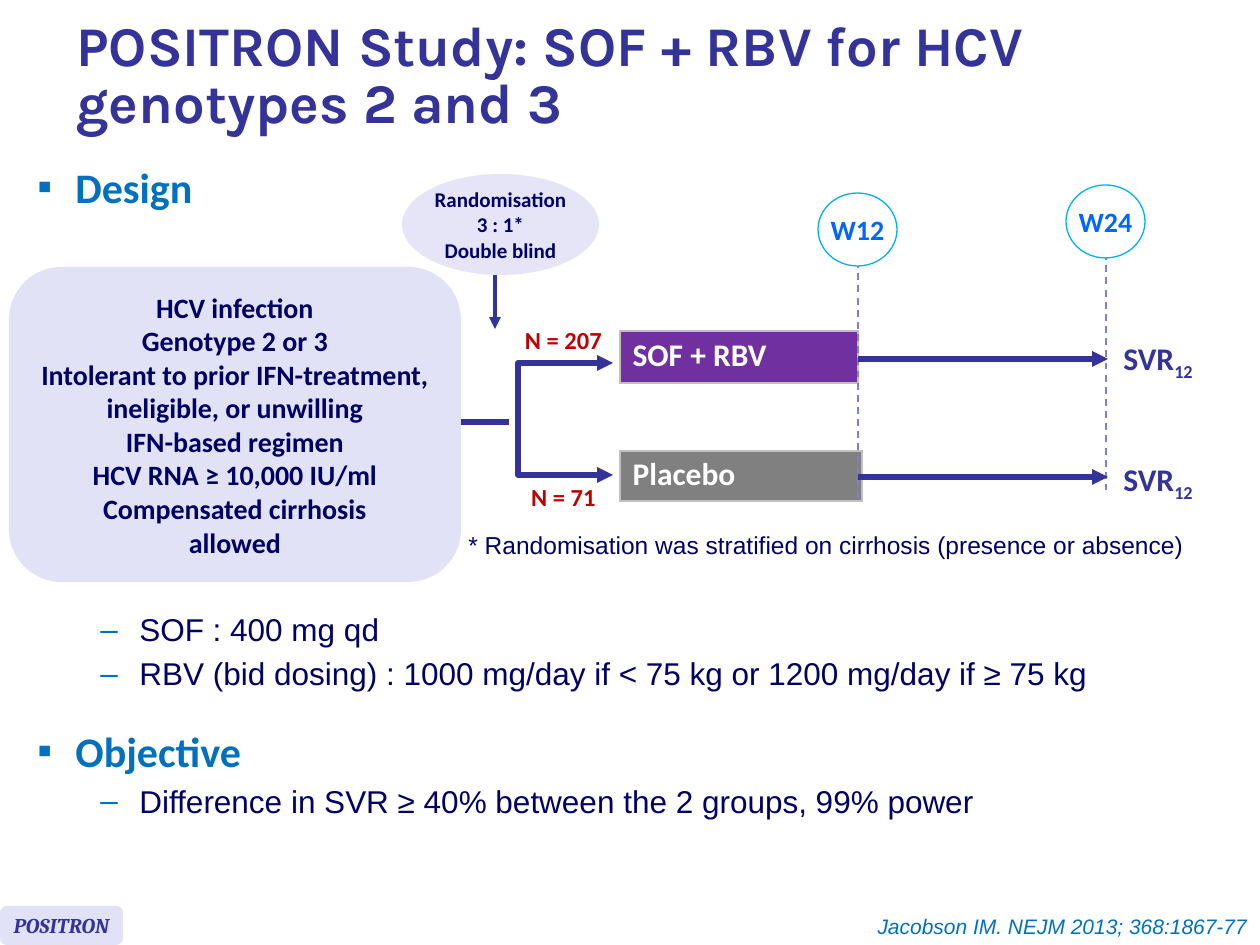
from dataclasses import dataclass

from lxml import etree
from pptx import Presentation
from pptx import util as u
from pptx.dml.color import RGBColor
from pptx.enum import dml, shapes, text
from pptx.oxml import ns

PX_PER_INCH = 126


def px(n):
    return u.Emu(round(n * 914400 / PX_PER_INCH))


def rgb(code):
    return RGBColor.from_string(code)


def sub(parent, tag, **attrs):
    return etree.SubElement(parent, ns.qn(tag), attrs)


@dataclass(frozen=True)
class Theme:
    navy: str = "000066"
    indigo: str = "333399"
    blue: str = "0070C0"
    week: str = "0066FF"
    ring: str = "00B0F0"
    dash: str = "7E7ED4"
    red: str = "C00000"
    pale: str = "E2E2F6"
    paler: str = "E5E5F7"
    purple: str = "7030A0"
    grey: str = "808080"
    border: str = "C0C0C0"
    white: str = "FFFFFF"
    title: int = 32
    heading: int = 24
    body: int = 18
    box: int = 16
    note: int = 14
    small: int = 12


T = Theme()


def write(tf, line, size=T.body, font="Calibri", color=T.navy, bold=True,
          italic=False, align=None, spacing=None, bullet=None, level=0, subscript=None):
    """Write one paragraph, using the empty first one if there is one."""
    first = not tf.paragraphs[0].runs
    p = tf.paragraphs[0] if first else tf.add_paragraph()
    p.level = level
    if align is not None:
        p.alignment = align
    if spacing:
        p.line_spacing = spacing
    if bullet:
        if not first:
            p.space_before = u.Pt(size * 0.2)
        left, hang = (102, 39) if level else (38, 38)
        pPr = p._p.get_or_add_pPr()
        pPr.set("marL", str(px(left)))
        pPr.set("indent", str(-px(hang)))
        sub(sub(pPr, "a:buClr"), "a:srgbClr", val=T.blue)
        sub(pPr, "a:buFont", typeface="Arial")
        sub(pPr, "a:buChar", char=bullet)
    for part in filter(None, (line, subscript)):
        r = p.add_run()
        r.text = part
        r.font.name, r.font.size = font, u.Pt(size)
        r.font.bold, r.font.italic = bold, italic
        r.font.color.rgb = rgb(color)
        if part is subscript:
            r._r.get_or_add_rPr().set("baseline", "-25000")


class Deck:
    def __init__(self):
        self.prs = Presentation()
        self.prs.slide_width, self.prs.slide_height = u.Inches(10), u.Inches(7.5)
        self.s = self.prs.slides.add_slide(self.prs.slide_layouts[6])

    def text(self, x, y, w, h, *lines, wrap=True, middle=False, **style):
        tf = self.s.shapes.add_textbox(px(x), px(y), px(w), px(h)).text_frame
        tf.word_wrap = wrap
        if middle:
            tf.vertical_anchor = text.MSO_ANCHOR.MIDDLE
        for line in lines:
            write(tf, line, **style)
        return tf

    def heading(self, x, y, w, h, line):
        return self.text(x, y, w, h, line, size=T.heading, color=T.blue, bullet="▪")

    def shape(self, kind, x, y, w, h, *lines, fill, line=None, **style):
        sp = self.s.shapes.add_shape(kind, px(x), px(y), px(w), px(h))
        sp.shadow.inherit = False
        sp.fill.solid()
        sp.fill.fore_color.rgb = rgb(fill)
        if line:
            sp.line.color.rgb, sp.line.width = rgb(line), u.Pt(0.75)
        else:
            sp.line.fill.background()
        tf = sp.text_frame
        tf.word_wrap = False
        tf.vertical_anchor = text.MSO_ANCHOR.MIDDLE
        for words in lines:
            write(tf, words, align=text.PP_ALIGN.CENTER, **style)

    def stroke(self, sp, color, width, dashed=False, ends=()):
        sp.line.color.rgb, sp.line.width = rgb(color), u.Pt(width)
        if dashed:
            sp.line.dash_style = dml.MSO_LINE.DASH
        for end in ends:
            sub(sp.line._get_or_add_ln(), end, type="triangle")

    def line(self, x1, y1, x2, y2, color=T.indigo, width=3, dashed=False, arrow=False):
        c = self.s.shapes.add_connector(
            shapes.MSO_CONNECTOR.STRAIGHT, px(x1), px(y1), px(x2), px(y2))
        self.stroke(c, color, width, dashed, ["a:tailEnd"] if arrow else [])
        sub(c._element.spPr, "a:effectLst")

    def fork(self, x, tip, top, bottom):
        """Draw a bracket with an arrowhead on both arms."""
        b = self.s.shapes.build_freeform(px(tip), px(top))
        b.add_line_segments([(px(x), px(top)), (px(x), px(bottom)),
                             (px(tip), px(bottom))], close=False)
        sp = b.convert_to_shape()
        sp.shadow.inherit = False
        sp.fill.background()
        self.stroke(sp, T.indigo, 3, ends=["a:headEnd", "a:tailEnd"])

    def arm(self, x, y, w, h, name, fill):
        """Draw a treatment arm as a one-cell table."""
        table = self.s.shapes.add_table(1, 1, px(x), px(y), px(w), px(h)).table
        table.first_row = table.horz_banding = False
        cell = table.cell(0, 0)
        cell.vertical_anchor = text.MSO_ANCHOR.MIDDLE
        write(cell.text_frame, name, color=T.white, spacing=0.8)
        tcPr = cell._tc.get_or_add_tcPr()
        for side in "LRTB":
            ln = sub(tcPr, f"a:ln{side}", w=str(u.Pt(1)))
            sub(sub(ln, "a:solidFill"), "a:srgbClr", val=T.border)
        cell.fill.solid()
        cell.fill.fore_color.rgb = rgb(fill)


def main():
    d = Deck()
    oval, rounded = shapes.MSO_SHAPE.OVAL, shapes.MSO_SHAPE.ROUNDED_RECTANGLE
    item = dict(font="Arial", bold=False, bullet="–", level=1)

    d.text(64, 10, 1150, 135, "POSITRON Study: SOF + RBV for HCV genotypes 2 and 3",
           middle=True, size=T.title, font="Karla", color=T.indigo, spacing=0.85)
    d.heading(25, 155, 229, 79, "Design")
    objective = d.heading(25, 719, 1221, 127, "Objective")
    write(objective, "Difference in SVR ≥ 40% between the 2 groups, 99% power", **item)
    d.text(25, 604, 1187, 97, "SOF : 400 mg qd",
           "RBV (bid dosing) : 1000 mg/day if < 75 kg or 1200 mg/day if ≥ 75 kg", **item)

    d.line(495, 275, 495, 329, width=2.25, arrow=True)
    d.shape(oval, 402, 174, 197, 101, "Randomisation", "3 : 1*", "Double blind",
            fill=T.paler, size=T.small)
    d.shape(rounded, 9, 267, 452, 315,
            "HCV infection", "Genotype 2 or 3", "Intolerant to prior IFN-treatment,",
            "ineligible, or unwilling", "IFN-based regimen", "HCV RNA ≥ 10,000 IU/ml",
            "Compensated cirrhosis", "allowed", fill=T.pale, size=T.box)
    d.text(456, 524, 760, 43,
           "* Randomisation was stratified on cirrhosis (presence or absence)",
           size=T.note, font="Arial", bold=False)

    d.line(461, 422, 509, 422)
    d.fork(518, 613, 363, 475)
    d.arm(620, 331, 238, 52, "SOF + RBV", T.purple)
    d.arm(620, 451, 242, 50, "Placebo", T.grey)
    for x, y, w, label in ((512, 319, 103, "N = 207"), (518, 476, 91, "N = 71")):
        d.text(x, y, w, 43, label, wrap=False, size=T.note, color=T.red,
               align=text.PP_ALIGN.CENTER)

    for x, y, week in ((858, 193, "W12"), (1106, 185, "W24")):
        d.line(x, y + 56, x, y + 305, color=T.dash, width=1, dashed=True)
        d.shape(oval, x - 40, y, 79, 73, week, fill=T.white, line=T.ring,
                size=T.box, color=T.week)
    for arrow_y, label_y in ((359, 333), (477, 454)):
        d.line(858, arrow_y, 1108, arrow_y, arrow=True)
        d.text(1111, label_y, 98, 50, "SVR", wrap=False, color=T.indigo, subscript="12")

    d.shape(rounded, 0, 906, 123, 39, "POSITRON", fill=T.pale, size=T.small,
            font="Cambria", color=T.indigo, italic=True)
    d.text(844, 907, 416, 38, "Jacobson IM. NEJM 2013; 368:1867-77", size=T.small,
           font="Arial", color=T.blue, bold=False, italic=True,
           align=text.PP_ALIGN.RIGHT)
    d.prs.save("out.pptx")


if __name__ == "__main__":
    main()
